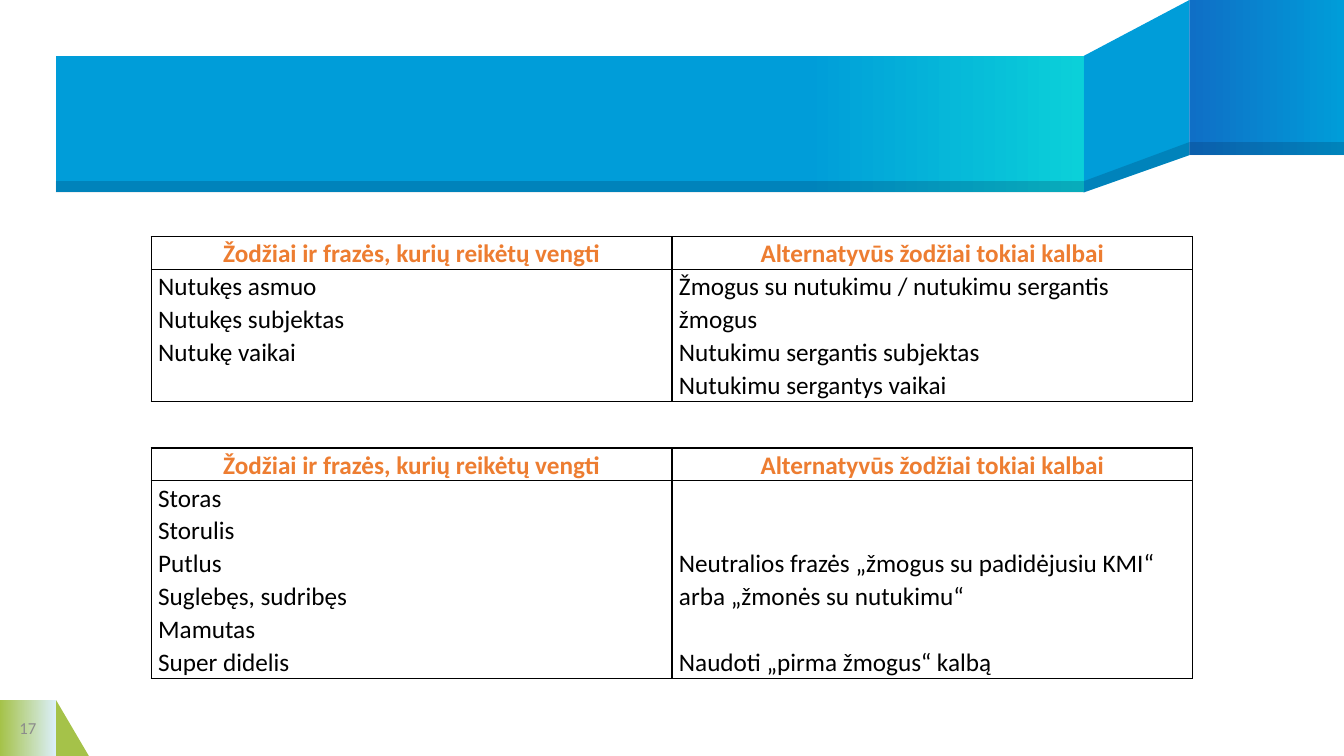
from dataclasses import dataclass

from lxml import etree
from pptx import Presentation
from pptx import util as u
from pptx.dml import color
from pptx.enum import shapes, text
from pptx.oxml import ns

HUES = {
    "blue": "009DD9", "navy": "0F6FC6", "cyan": "0BD0D9", "shade": "001F46",
    "green": "A5C249", "pale": "DBEFF9", "orange": "ED7D31", "black": "000000",
    "grey": "8C8C8C",
}
FONT = "Calibri"
LINE = 23.5
EDGE, FOLD, WALL = 40, 774, 849.6
WIDE, TALL = 960, 540
FOOT = 500
HEADS = ("Žodžiai ir frazės, kurių reikėtų vengti", "Alternatyvūs žodžiai tokiai kalbai")


@dataclass
class Box:
    left: float
    top: float
    right: float
    low: float
    stops: tuple
    alpha: int = 100
    kind: shapes.MSO_SHAPE = shapes.MSO_SHAPE.RECTANGLE


@dataclass
class Fold:
    dots: tuple
    hue: str
    alpha: int = 100


@dataclass
class Line:
    words: str
    skip: int = 0


@dataclass
class Grid:
    top: float
    rows: int
    left: tuple
    right: tuple


def rgb(hue: str) -> color.RGBColor:
    return color.RGBColor.from_string(HUES[hue])


def paint(shape, stops: tuple, alpha: int) -> None:
    shape.shadow.inherit = False
    shape.line.fill.background()
    fill = shape.fill
    props = shape._element.spPr
    if len(stops) == 1:
        fill.solid()
        fill.fore_color.rgb = rgb(stops[0][1])
        if alpha < 100:
            tint = props.find(".//" + ns.qn("a:srgbClr"))
            etree.SubElement(tint, ns.qn("a:alpha"), val=str(alpha * 1000))
        return
    fill.gradient()
    fill.gradient_angle = 0
    ramp = props.find(".//" + ns.qn("a:gsLst"))
    for old in list(ramp):
        ramp.remove(old)
    for place, hue in stops:
        stop = etree.SubElement(ramp, ns.qn("a:gs"), pos=str(place * 1000))
        etree.SubElement(stop, ns.qn("a:srgbClr"), val=HUES[hue])


def draw_box(slide, box: Box) -> None:
    shape = slide.shapes.add_shape(
        box.kind, u.Pt(box.left), u.Pt(box.top),
        u.Pt(box.right - box.left), u.Pt(box.low - box.top))
    paint(shape, box.stops, box.alpha)


def draw_fold(slide, fold: Fold) -> None:
    dots = [(u.Pt(x), u.Pt(y)) for x, y in fold.dots]
    pen = slide.shapes.build_freeform(*dots[0])
    pen.add_line_segments(dots[1:], close=True)
    paint(pen.convert_to_shape(), ((0, fold.hue),), fold.alpha)


def add_run(para, words: str, size: float, hue: str, bold: bool = False) -> None:
    run = para.add_run()
    run.text = words
    font = run.font
    font.name, font.size, font.bold = FONT, u.Pt(size), bold
    font.color.rgb = rgb(hue)


def frame(cell) -> None:
    props = cell._tc.get_or_add_tcPr()
    for side in ("lnL", "lnR", "lnT", "lnB"):
        line = etree.SubElement(props, ns.qn("a:" + side), w=str(u.Pt(1)))
        fill = etree.SubElement(line, ns.qn("a:solidFill"))
        etree.SubElement(fill, ns.qn("a:srgbClr"), val=HUES["black"])
    cell.fill.background()


def fill_cell(cell, lines: tuple, head: bool) -> None:
    frame(cell)
    cell.margin_left = cell.margin_right = u.Pt(5)
    cell.margin_top = u.Pt(lines[0].skip * LINE)
    cell.margin_bottom = 0
    body = cell.text_frame
    for spot, line in enumerate(lines):
        para = body.add_paragraph() if spot else body.paragraphs[0]
        para.line_spacing = 1.07
        if spot and line.skip:
            para.space_before = u.Pt(line.skip * LINE)
        if head:
            para.alignment = text.PP_ALIGN.CENTER
        add_run(para, line.words, 18, "orange" if head else "black", head)


def draw_grid(slide, grid: Grid) -> None:
    high = LINE * (grid.rows + 1)
    table = slide.shapes.add_table(
        2, 2, u.Pt(108), u.Pt(grid.top), u.Pt(744), u.Pt(high)).table
    table.first_row = table.horz_banding = False
    table.rows[0].height = u.Pt(LINE)
    table.rows[1].height = u.Pt(LINE * grid.rows)
    for col, lines in enumerate((grid.left, grid.right)):
        fill_cell(table.cell(0, col), (Line(HEADS[col]),), True)
        fill_cell(table.cell(1, col), lines, False)


def draw_page(slide) -> None:
    box = slide.shapes.add_textbox(0, u.Pt(FOOT), u.Pt(EDGE), u.Pt(TALL - FOOT))
    body = box.text_frame
    body.word_wrap = True
    body.margin_left = body.margin_right = body.margin_top = body.margin_bottom = 0
    body.vertical_anchor = text.MSO_ANCHOR.MIDDLE
    para = body.paragraphs[0]
    para.alignment = text.PP_ALIGN.CENTER
    add_run(para, "17", 12, "grey")


SHADE = ((0, "shade"),)
PARTS = (
    Box(EDGE, FOOT, 63.5, TALL, ((0, "green"),), kind=shapes.MSO_SHAPE.RIGHT_TRIANGLE),
    Box(0, FOOT, EDGE, TALL, ((0, "green"), (100, "pale"))),
    Fold(((WALL, 0), (FOLD, EDGE), (FOLD, 137.5), (WALL, 110.8)), "blue"),
    Box(WALL, 0, WIDE, 110.8, ((0, "navy"), (100, "blue"))),
    Box(EDGE, EDGE, FOLD, 137.5, ((0, "blue"), (73, "blue"), (100, "cyan"))),
    Fold(((WALL, 101.5), (FOLD, 129.5), (FOLD, 137.5), (WALL, 110.8)), "shade", 20),
    Box(WALL, 101.5, WIDE, 110.8, SHADE, 20),
    Box(EDGE, 129.5, FOLD, 137.5, SHADE, 20),
)
GRIDS = (
    Grid(169, 4,
         (Line("Nutukęs asmuo"), Line("Nutukęs subjektas"), Line("Nutukę vaikai")),
         (Line("Žmogus su nutukimu / nutukimu sergantis žmogus"),
          Line("Nutukimu sergantis subjektas"), Line("Nutukimu sergantys vaikai"))),
    Grid(320, 6,
         (Line("Storas"), Line("Storulis"), Line("Putlus"),
          Line("Suglebęs, sudribęs"), Line("Mamutas"), Line("Super didelis")),
         (Line("Neutralios frazės „žmogus su padidėjusiu KMI“ arba „žmonės su nutukimu“", 2),
          Line("Naudoti „pirma žmogus“ kalbą", 1))),
)


def main() -> None:
    deck = Presentation()
    deck.slide_width, deck.slide_height = u.Pt(WIDE), u.Pt(TALL)
    slide = deck.slides.add_slide(deck.slide_layouts[6])
    for part in PARTS:
        if isinstance(part, Box):
            draw_box(slide, part)
        else:
            draw_fold(slide, part)
    draw_page(slide)
    for grid in GRIDS:
        draw_grid(slide, grid)
    deck.save("out.pptx")


if __name__ == "__main__":
    main()
